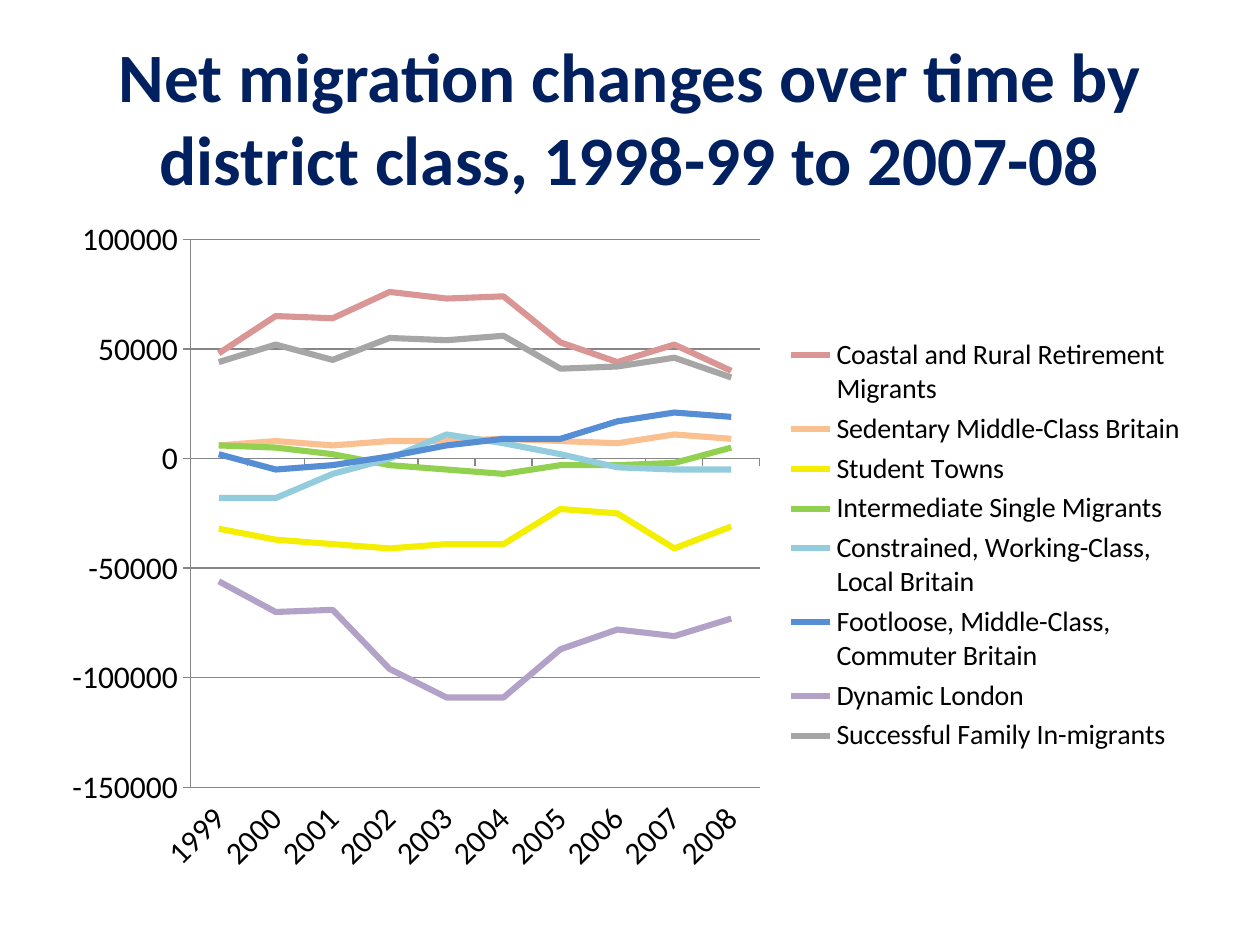
from dataclasses import dataclass

from lxml import etree
from pptx import Presentation
from pptx.chart.chart import Chart
from pptx.chart.data import CategoryChartData
from pptx.dml.color import RGBColor
from pptx.enum.chart import (XL_CHART_TYPE, XL_LEGEND_POSITION, XL_MARKER_STYLE,
                             XL_TICK_LABEL_POSITION, XL_TICK_MARK)
from pptx.enum.text import MSO_ANCHOR, PP_ALIGN
from pptx.oxml.ns import qn
from pptx.slide import Slide
from pptx.util import Inches, Pt

LINE = XL_CHART_TYPE.LINE
RIGHT = XL_LEGEND_POSITION.RIGHT
NO_MARK = XL_MARKER_STYLE.NONE
LOW = XL_TICK_LABEL_POSITION.LOW
OUTSIDE, NO_TICK = XL_TICK_MARK.OUTSIDE, XL_TICK_MARK.NONE
MIDDLE, CENTER = MSO_ANCHOR.MIDDLE, PP_ALIGN.CENTER


@dataclass(frozen=True)
class Theme:
    font: str = "Calibri"
    title: str = "002060"
    text: str = "000000"
    grid: str = "868686"
    title_size: float = 39.6
    axis_size: float = 18
    key_size: float = 16
    grid_width: float = 0.75
    line_width: float = 3.5


@dataclass(frozen=True)
class Box:
    left: float
    top: float
    width: float
    height: float

    def lengths(self) -> list[int]:
        return [Inches(v) for v in (self.left, self.top, self.width, self.height)]

    def share(self, whole: "Box") -> "Box":
        return Box((self.left - whole.left) / whole.width,
                   (self.top - whole.top) / whole.height,
                   self.width / whole.width, self.height / whole.height)


@dataclass(frozen=True)
class Group:
    name: str
    color: str
    flows: tuple[int, ...]


THEME = Theme()
TITLE = "Net migration changes over time by district class, 1998-99 to 2007-08"
TITLE_BOX = Box(0.5, 0.3, 9, 1.25)
CHART_BOX = Box(0.39, 1.64, 9.14, 5.39)
PLOT_BOX = Box(1.51, 1.9, 4.52, 4.35)
KEY_BOX = Box(6.22, 2.64, 3.2, 3.38)
YEARS = [str(year) for year in range(1999, 2009)]
GROUPS = (
    Group("Coastal and Rural Retirement Migrants", "D99694",
          (48, 65, 64, 76, 73, 74, 53, 44, 52, 40)),
    Group("Sedentary Middle-Class Britain", "FAC090",
          (6, 8, 6, 8, 8, 9, 8, 7, 11, 9)),
    Group("Student Towns", "F4EE00",
          (-32, -37, -39, -41, -39, -39, -23, -25, -41, -31)),
    Group("Intermediate Single Migrants", "92D050",
          (6, 5, 2, -3, -5, -7, -3, -3, -2, 5)),
    Group("Constrained, Working-Class, Local Britain", "93CDDD",
          (-18, -18, -7, 0, 11, 7, 2, -4, -5, -5)),
    Group("Footloose, Middle-Class, Commuter Britain", "558ED5",
          (2, -5, -3, 1, 6, 9, 9, 17, 21, 19)),
    Group("Dynamic London", "B3A2C7",
          (-56, -70, -69, -96, -109, -109, -87, -78, -81, -73)),
    Group("Successful Family In-migrants", "A6A6A6",
          (44, 52, 45, 55, 54, 56, 41, 42, 46, 37)),
)


def set_font(font, size: float, color: str, bold: bool = False) -> None:
    font.name, font.size, font.bold = THEME.font, Pt(size), bold
    font.color.rgb = RGBColor.from_string(color)


def set_line(line, width: float, color: str) -> None:
    line.width = Pt(width)
    line.color.rgb = RGBColor.from_string(color)


def add_title(slide: Slide) -> None:
    title = slide.shapes.title
    title.left, title.top, title.width, title.height = TITLE_BOX.lengths()
    frame = title.text_frame
    frame.word_wrap, frame.vertical_anchor = True, MIDDLE
    para = frame.paragraphs[0]
    para.alignment = CENTER
    run = para.add_run()
    run.text = TITLE
    set_font(run.font, THEME.title_size, THEME.title, bold=True)


def place_part(part, index: int, box: Box, inner: bool = False) -> None:
    for old in part.findall(qn("c:layout")):
        part.remove(old)
    layout = etree.Element(qn("c:layout"))
    manual = etree.SubElement(layout, qn("c:manualLayout"))
    share = box.share(CHART_BOX)
    rules = [("layoutTarget", "inner")] if inner else []
    rules += [("xMode", "edge"), ("yMode", "edge"), ("x", share.left),
              ("y", share.top), ("w", share.width), ("h", share.height)]
    for tag, value in rules:
        etree.SubElement(manual, qn(f"c:{tag}")).set("val", str(value))
    part.insert(index, layout)


def style_axes(chart: Chart) -> None:
    years, flows = chart.category_axis, chart.value_axis
    for axis in (years, flows):
        axis.major_tick_mark, axis.minor_tick_mark = OUTSIDE, NO_TICK
        set_font(axis.tick_labels.font, THEME.axis_size, THEME.text)
        set_line(axis.format.line, THEME.grid_width, THEME.grid)
    years.has_major_gridlines = False
    years.tick_label_position = LOW
    chart.element.find(f".//{qn('c:catAx')}/{qn('c:txPr')}/{qn('a:bodyPr')}").set("rot", "-2700000")
    flows.minimum_scale, flows.maximum_scale, flows.major_unit = -150000, 100000, 50000
    flows.tick_labels.number_format = "General"
    flows.tick_labels.number_format_is_linked = False
    flows.has_major_gridlines = True
    set_line(flows.major_gridlines.format.line, THEME.grid_width, THEME.grid)


def add_lines(slide: Slide) -> None:
    data = CategoryChartData()
    data.categories = YEARS
    for group in GROUPS:
        data.add_series(group.name, [flow * 1000 for flow in group.flows])
    chart = slide.shapes.add_chart(LINE, *CHART_BOX.lengths(), data).chart
    chart.has_title = False
    set_font(chart.font, THEME.axis_size, THEME.text)
    chart.plots[0].vary_by_categories = False
    for group, series in zip(GROUPS, chart.plots[0].series):
        series.smooth = False
        series.marker.style = NO_MARK
        set_line(series.format.line, THEME.line_width, group.color)
    style_axes(chart)
    chart.has_legend = True
    chart.legend.position = RIGHT
    chart.legend.include_in_layout = False
    set_font(chart.legend.font, THEME.key_size, THEME.text)
    place_part(chart.element.find(f".//{qn('c:plotArea')}"), 0, PLOT_BOX, inner=True)
    place_part(chart.element.find(f".//{qn('c:legend')}"), 1, KEY_BOX)


def main() -> None:
    """Build the net migration slide and save it."""
    deck = Presentation()
    deck.slide_width, deck.slide_height = Inches(10), Inches(7.5)
    slide = deck.slides.add_slide(deck.slide_layouts[5])
    add_title(slide)
    add_lines(slide)
    deck.save("out.pptx")


if __name__ == "__main__":
    main()
